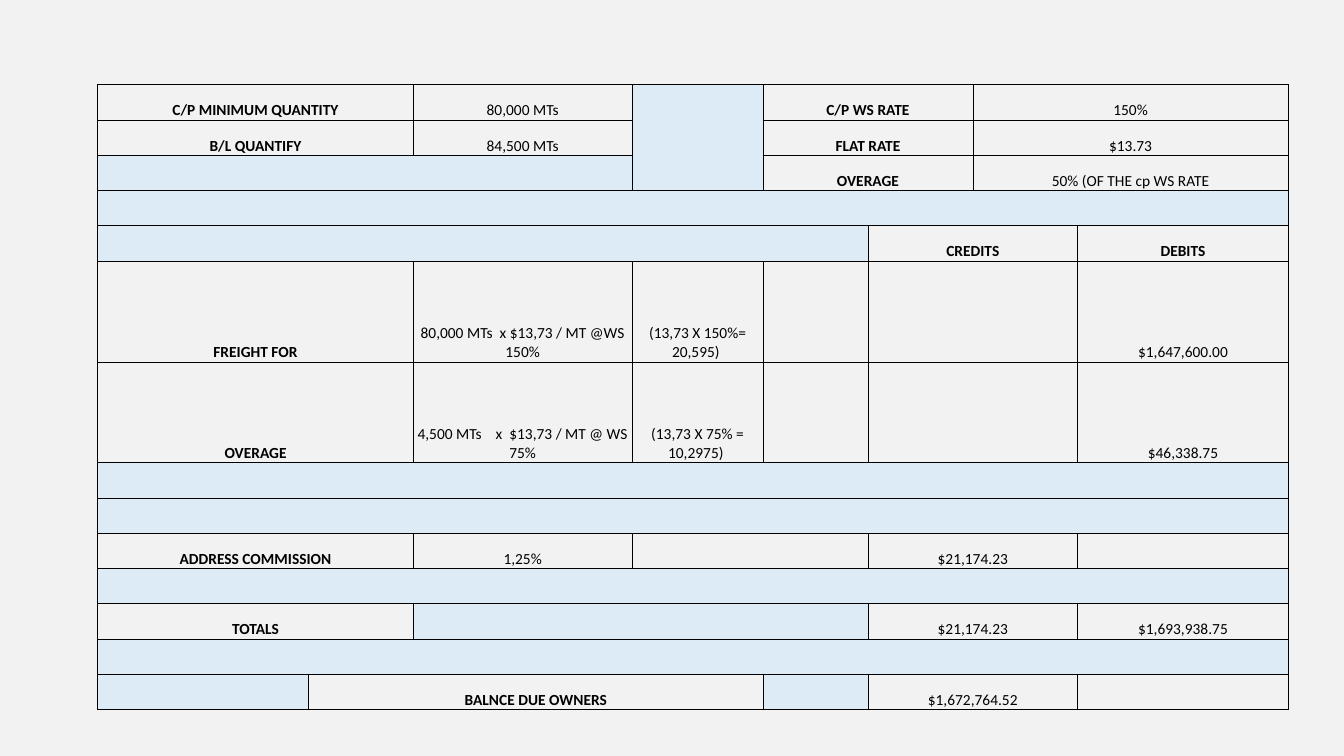
import pptx
import pptx.util
import pptx.dml.color
import pptx.enum.text
import pptx.oxml
import pptx.oxml.ns
from pptx.util import Inches

INK = "000000"
GAP = "DDEBF7"
PAPER = "F2F2F2"


def color(value):
    return pptx.dml.color.RGBColor.from_string(value)


def assign(target, values):
    for name, value in values.items():
        setattr(target, name, value)


def label(text, columns=2):
    return text, columns, 1, True, None


def entry(text="", columns=1):
    return text, columns, 1, False, None


def gap(columns=8, rows=1):
    return "", columns, rows, False, GAP


class Statement:
    cell_format = {
        "margin_left": Inches(0.01),
        "margin_right": Inches(0.01),
        "margin_top": Inches(0.01),
        "margin_bottom": 0,
        "vertical_anchor": pptx.enum.text.MSO_ANCHOR.BOTTOM,
    }
    font_format = {"name": "Calibri", "size": pptx.util.Pt(11)}
    plain_table = {"first_row": False, "horz_banding": False}

    def __init__(self, slide):
        self.slide = slide

    def background(self, fill):
        self.slide.background.fill.solid()
        self.slide.background.fill.fore_color.rgb = color(fill)

    def borders(self, cell):
        properties = cell._tc.get_or_add_tcPr()
        for position, side in enumerate(("lnL", "lnR", "lnT", "lnB")):
            properties.insert(position, pptx.oxml.parse_xml(
                f'<a:{side} {pptx.oxml.ns.nsdecls("a")} w="{pptx.util.Pt(0.5)}">'
                f'<a:solidFill><a:srgbClr val="{INK}"/></a:solidFill></a:{side}>'))

    def paint(self, cell, fill):
        assign(cell, self.cell_format)
        if fill:
            cell.fill.solid()
            cell.fill.fore_color.rgb = color(fill)
        else:
            cell.fill.background()
        self.borders(cell)

    def caption(self, cell, text, bold):
        paragraph = cell.text_frame.paragraphs[0]
        paragraph.alignment = pptx.enum.text.PP_ALIGN.CENTER
        assign(paragraph.font, self.font_format)
        if text:
            run = paragraph.add_run()
            run.text = text
            assign(run.font, {**self.font_format, "bold": bold})
            run.font.color.rgb = color(INK)

    def table(self, left, top, widths, heights, lines):
        table = self.slide.shapes.add_table(
            len(heights), len(widths), Inches(left), Inches(top),
            Inches(sum(widths)), Inches(sum(heights))).table
        assign(table, self.plain_table)
        for column, width in zip(table.columns, widths):
            column.width = Inches(width)
        for row, height in zip(table.rows, heights):
            row.height = Inches(height)
        for row, line in enumerate(lines):
            column = 0
            for text, columns, rows, bold, fill in line:
                while table.cell(row, column).is_spanned:
                    column += 1
                cell = table.cell(row, column)
                for down in range(rows):
                    for across in range(columns):
                        self.paint(table.cell(row + down, column + across), fill)
                if rows * columns > 1:
                    cell.merge(table.cell(row + rows - 1, column + columns - 1))
                self.caption(cell, text, bold)
                column += columns


def main():
    deck = pptx.Presentation()
    deck.slide_width = Inches(13.33)
    deck.slide_height = Inches(7.5)
    statement = Statement(deck.slides.add_slide(deck.slide_layouts[6]))
    statement.background(PAPER)

    freight_lines = [
        [label("C/P MINIMUM QUANTITY"), entry("80,000 MTs"), gap(1, 3),
         label("C/P WS RATE"), entry("150%", 2)],
        [label("B/L QUANTIFY"), entry("84,500 MTs"),
         label("FLAT RATE"), entry("$13.73", 2)],
        [gap(3), label("OVERAGE"), entry("50% (OF THE cp WS RATE", 2)],
        [gap()],
        [gap(5), label("CREDITS"), label("DEBITS", 1)],
        [label("FREIGHT FOR"), entry("80,000 MTs  x $13,73 / MT @WS 150%"),
         entry("(13,73 X 150%= 20,595) "), entry(), entry(columns=2),
         entry("$1,647,600.00")],
        [label("OVERAGE"), entry("4,500 MTs    x  $13,73 / MT @ WS 75%"),
         entry("(13,73 X 75% = 10,2975) "), entry(), entry(columns=2),
         entry("$46,338.75")],
        [gap()],
        [gap()],
        [label("ADDRESS COMMISSION"), entry("1,25%"), entry(columns=2),
         entry("$21,174.23", 2), entry()],
        [gap()],
        [label("TOTALS"), gap(3), entry("$21,174.23", 2), entry("$1,693,938.75")],
        [gap()],
        [gap(1), label("BALNCE DUE OWNERS", 3), gap(1),
         entry("$1,672,764.52", 2), entry()],
    ]
    widths = [2.09, 1.04, 2.17, 1.3, 1.04, 1.04, 1.04, 2.09]
    heights = [0.35] * 5 + [1] * 2 + [0.35] * 7
    statement.table(0.97, 0.84, widths, heights, freight_lines)
    deck.save("out.pptx")


if __name__ == "__main__":
    main()
